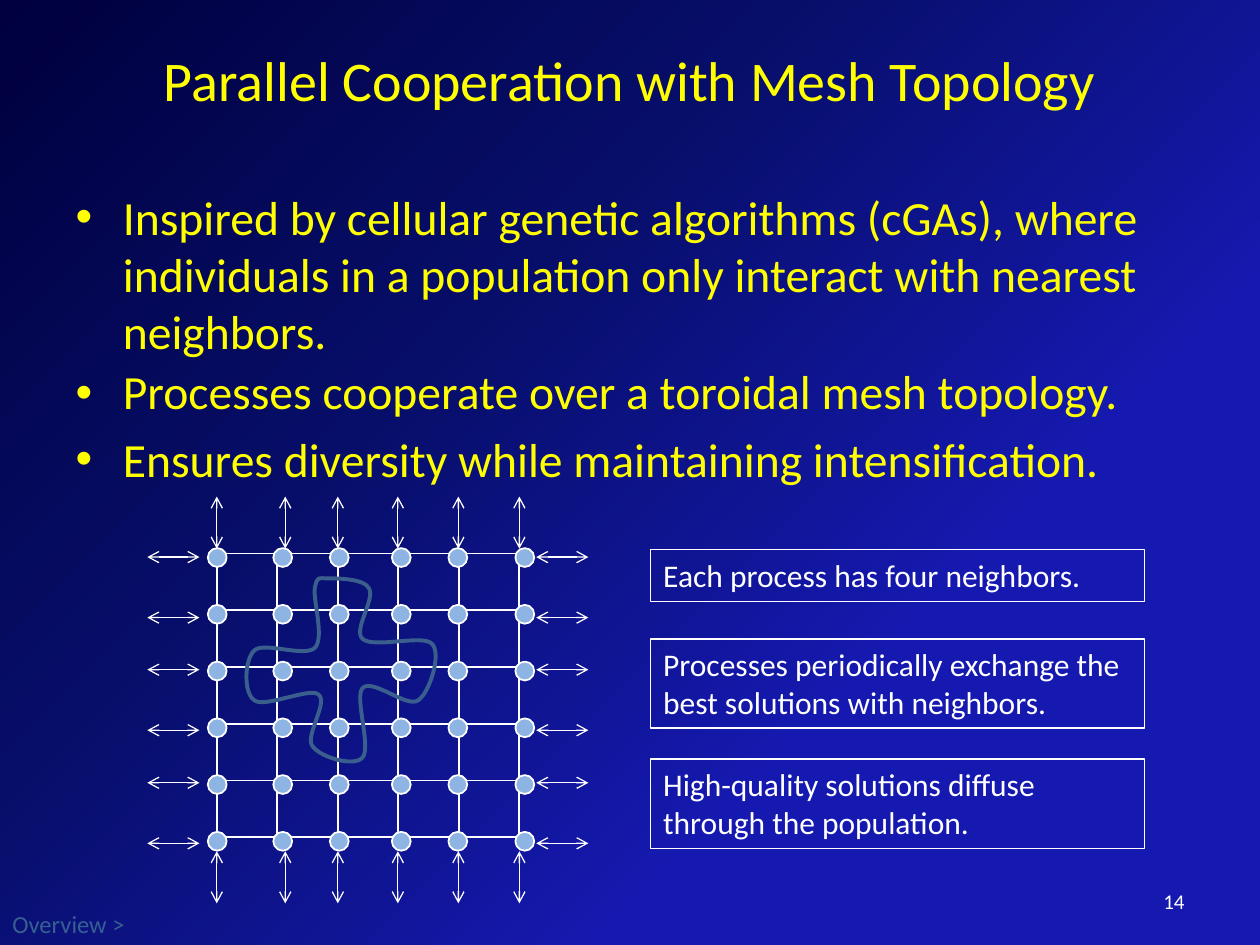
from copy import deepcopy
from pptx import Presentation
from pptx.dml.color import RGBColor
from pptx.enum.shapes import MSO_CONNECTOR, MSO_SHAPE
from pptx.enum.text import MSO_ANCHOR, MSO_AUTO_SIZE, PP_ALIGN
from pptx.oxml.ns import qn
from pptx.util import Cm, Pt
from lxml.etree import Element, SubElement

WHITE, YELLOW, BLUE = "FFFFFF", "FFFF00", "8EB4E3"
SLATE, STEEL = "3A5F8C", "376092"
BACK = [(0, "00003E"), (0.36, "070E69"), (0.7, "1519AF")]
CELLS = 5
GRID_W, GRID_H, DOT, ARM = 6.1, 5.72, 0.38, 1.05
CELL_W, CELL_H = GRID_W / CELLS, GRID_H / CELLS
GROW = {"auto_size": MSO_AUTO_SIZE.SHAPE_TO_FIT_TEXT}

# Offsets inside the mesh box, in cm
DOT_X = [1.22, 2.54, 3.68, 4.93, 6.07, 7.42]
ROW_Y = [1.22, 2.44, 3.49, 4.71, 5.77, 6.99]
COL_X = [1.4, 2.78, 3.84, 5.05, 6.27, 7.5]

# Outline of the neighborhood: two handles and an end point per curve
START = (1.45, 0.23)
CURVES = [
    ((1.4, 0.46), (1.65, 1.24), (1.45, 1.45)),
    ((1.24, 1.65), (0.43, 1.32), (0.23, 1.5)),
    ((0.03, 1.68), (0, 2.36), (0.23, 2.51)),
    ((0.43, 2.67), (1.35, 2.24), (1.52, 2.39)),
    ((1.73, 2.54), (1.24, 3.23), (1.4, 3.43)),
    ((1.55, 3.66), (2.26, 3.86), (2.41, 3.66)),
    ((2.59, 3.45), (2.24, 2.44), (2.41, 2.26)),
    ((2.62, 2.06), (3.3, 2.67), (3.53, 2.51)),
    ((3.76, 2.36), (4.01, 1.57), (3.81, 1.37)),
    ((3.63, 1.17), (2.64, 1.47), (2.41, 1.27)),
    ((2.21, 1.09), (2.67, 0.48), (2.54, 0.25)),
    ((2.44, 0.05), (1.88, 0.05), (1.7, 0.05)),
    ((1.52, 0.05), (1.5, 0), START),
]

POINTS = [
    "Inspired by cellular genetic algorithms (cGAs), where individuals "
    "in a population only interact with nearest neighbors.",
    "Processes cooperate over a toroidal mesh topology.",
    "Ensures diversity while maintaining intensification.",
]
NOTES = [
    (0, 1.05, "Each process has four neighbors."),
    (1.8, 1.8, "Processes periodically exchange the best solutions with neighbors."),
    (4.22, 1.8, "High-quality solutions diffuse through the population."),
]


def tint(code):
    return RGBColor.from_string(code)


def apply(item, form):
    for name, value in form.items():
        setattr(item, name, value)


def place(shape, box):
    names = ("left", "top", "width", "height")
    apply(shape, dict(zip(names, map(Cm, box))))


def write(shape, lines, size, color, frame=None, para=None):
    text = shape.text_frame
    text.text = "\n".join(lines)
    apply(text, {"word_wrap": True, "auto_size": MSO_AUTO_SIZE.NONE, **(frame or {})})
    for part in text.paragraphs:
        apply(part, para or {})
        for run in part.runs:
            apply(run.font, {"name": "Calibri", "size": Pt(size)})
            run.font.color.rgb = tint(color)


def style(shape, line, width, fill=None):
    shape.shadow.inherit = False
    if fill:
        shape.fill.solid()
        shape.fill.fore_color.rgb = tint(fill)
    else:
        shape.fill.background()
    shape.line.color.rgb = tint(line)
    shape.line.width = Pt(width)


def draw(parent, kind, box, width, fill=None):
    shape = parent.shapes.add_shape(kind, *map(Cm, box))
    style(shape, WHITE, width, fill)
    return shape


def arrow(parent, *ends):
    line = parent.shapes.add_connector(MSO_CONNECTOR.STRAIGHT, *map(Cm, ends))
    line.line.color.rgb = tint(WHITE)
    line.line.width = Pt(0.75)
    props = line._element.spPr
    for tag in ("a:headEnd", "a:tailEnd"):
        SubElement(props.find(qn("a:ln")), qn(tag), type="arrow")
    SubElement(props, qn("a:effectLst"))


def paint(slide):
    fill = slide.background.fill
    fill.gradient()
    fill.gradient_angle = 315
    stops = slide.element.find(".//" + qn("a:gsLst"))
    stops.append(deepcopy(stops[0]))
    for stop, (pos, code) in zip(fill.gradient_stops, BACK):
        stop.position = pos
        stop.color.rgb = tint(code)


def head(slide, box):
    title = slide.shapes.title
    place(title, box)
    write(title, ["Parallel Cooperation with Mesh Topology"], 32, YELLOW,
          {"vertical_anchor": MSO_ANCHOR.MIDDLE}, {"alignment": PP_ALIGN.CENTER})


def body(slide, box):
    hold = slide.placeholders[1]
    place(hold, box)
    write(hold, POINTS, 27.2, YELLOW)
    hold.text_frame.paragraphs[1].line_spacing = 0.9


def mesh(slide, box):
    left, top, wide, high = box
    group = slide.shapes.add_group_shape()
    # Grid of columns, then rows as columns turned on their side
    x, y = left + 1.4, top + 1.15
    for i in range(CELLS):
        draw(group, MSO_SHAPE.RECTANGLE, (x + i * CELL_W, y, CELL_W, GRID_H), 1)
    for i in range(CELLS):
        row = draw(group, MSO_SHAPE.RECTANGLE,
                   (x + (GRID_W - CELL_H) / 2, y + (i + 0.5) * CELL_H - GRID_W / 2,
                    CELL_H, GRID_W), 1)
        row.rotation = 90
    # Processes
    for dx in DOT_X:
        for i in range(CELLS + 1):
            draw(group, MSO_SHAPE.OVAL,
                 (left + dx, top + 1.04 + i * CELL_H, DOT, DOT), 1, BLUE)
    # Wraparound links
    for start in (left + wide - ARM, left):
        for dy in ROW_Y:
            arrow(group, start, top + dy, start + ARM, top + dy)
    for end in (top, top + high - ARM):
        for dx in COL_X:
            arrow(group, left + dx, end + ARM, left + dx, end)


def blob(slide, box):
    left, top, wide, high = box
    pen = slide.shapes.build_freeform(Cm(left + START[0]), Cm(top + START[1]))
    pen.add_line_segments([(Cm(left + x), Cm(top + y)) for *_, (x, y) in CURVES])
    shape = pen.convert_to_shape()
    place(shape, box)
    style(shape, SLATE, 2.25)
    # Bend the straight segments into curves
    trail = shape._element.find(".//" + qn("a:path"))
    trail.set("w", str(Cm(wide)))
    trail.set("h", str(Cm(high)))
    for old in list(trail):
        trail.remove(old)
    steps = [("a:moveTo", [START])] + [("a:cubicBezTo", c) for c in CURVES]
    for tag, spots in steps:
        step = SubElement(trail, qn(tag))
        for x, y in spots:
            SubElement(step, qn("a:pt"), x=str(Cm(x)), y=str(Cm(y)))
    trail.append(Element(qn("a:close")))


def notes(slide, box):
    left, top, wide, _ = box
    for dy, high, text in NOTES:
        shape = draw(slide, MSO_SHAPE.RECTANGLE, (left, top + dy, wide, high), 0.75)
        write(shape, [text], 18, WHITE, {"vertical_anchor": MSO_ANCHOR.TOP, **GROW},
              {"alignment": PP_ALIGN.LEFT})


def label(slide, box, text, size, color, frame, para=None):
    shape = slide.shapes.add_textbox(*map(Cm, box))
    write(shape, [text], size, color, frame, para)


def main():
    deck = Presentation()
    apply(deck, {"slide_width": Cm(25.4), "slide_height": Cm(19.05)})
    slide = deck.slides.add_slide(deck.slide_layouts[1])
    paint(slide)
    head(slide, (1.27, 0, 22.86, 3.18))
    body(slide, (1.27, 3.66, 22.86, 6.78))
    mesh(slide, (2.97, 10.01, 8.89, 8.2))
    blob(slide, (4.9, 11.61, 3.99, 3.86))
    notes(slide, (13.12, 11.08, 9.96, 6.02))
    # Footer
    label(slide, (18.21, 17.65, 5.92, 1.02), "14", 12, WHITE,
          {"vertical_anchor": MSO_ANCHOR.MIDDLE}, {"alignment": PP_ALIGN.RIGHT})
    label(slide, (0, 18.2, 2.79, 0.86), "Overview >", 14, STEEL,
          {"word_wrap": False, **GROW})
    deck.save("out.pptx")


if __name__ == "__main__":
    main()
